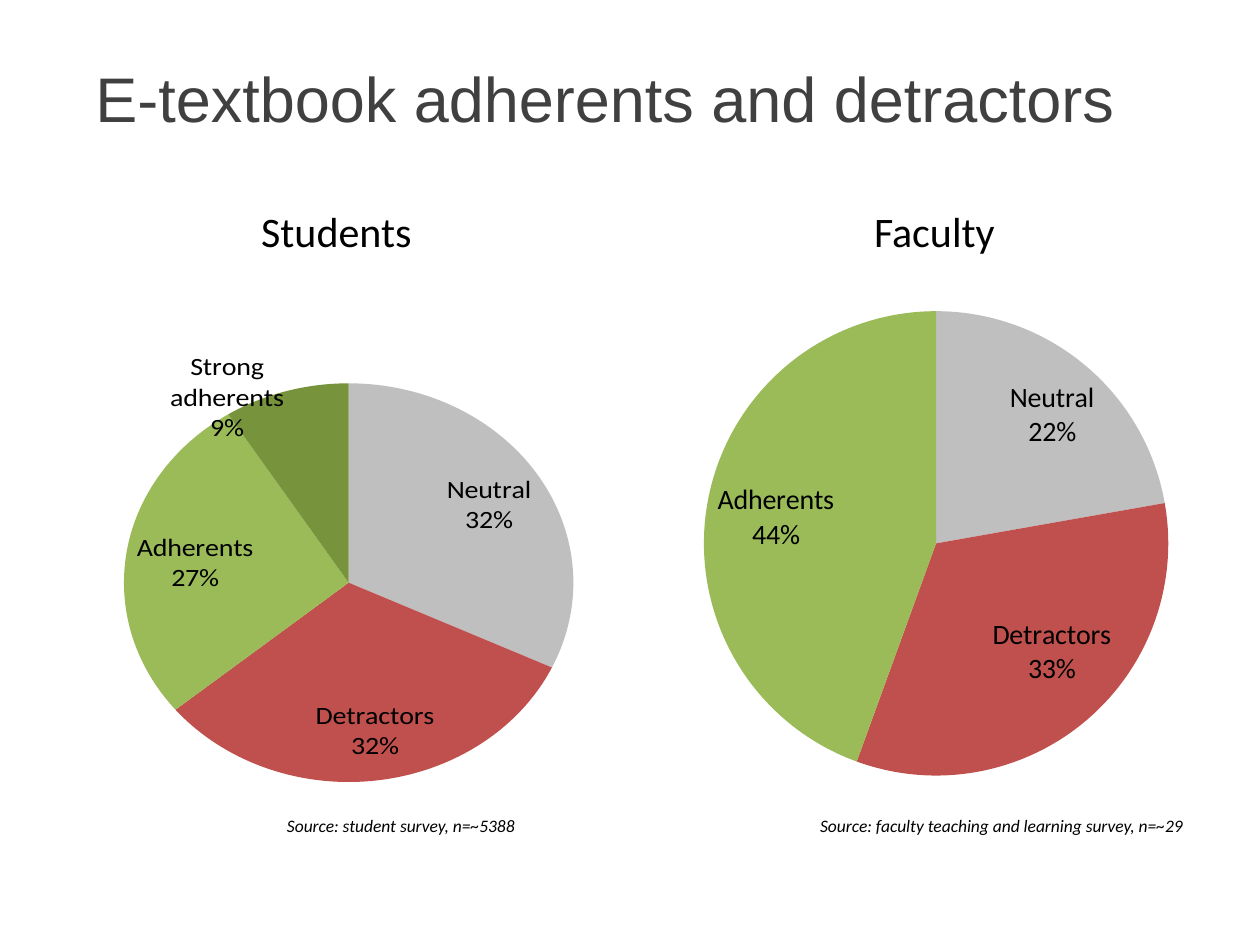
from lxml import etree
from pptx import Presentation
from pptx.chart.data import CategoryChartData
from pptx.dml.color import RGBColor
from pptx.enum.chart import XL_CHART_TYPE, XL_LABEL_POSITION
from pptx.enum.text import MSO_ANCHOR, PP_ALIGN
from pptx.oxml import parse_xml
from pptx.oxml.ns import nsdecls, qn
from pptx.util import Emu, Pt

EMU_PER_PX = 914400 / 126

# Format values
TITLE = {"name": "Arial", "size": Pt(36)}
HEADING = {"name": "Calibri", "size": Pt(24)}
SOURCE = {"name": "Calibri", "size": Pt(10), "italic": True}
CHART = {"name": "Calibri", "size": Pt(12)}
LABEL = {"name": "Calibri", "size": Pt(16)}

SLICE_COLORS = {
    "Neutral": "BFBFBF",
    "Detractors": "C0504D",
    "Adherents": "9BBB59",
    "Strong adherents": "77933C",
}
PLOT_AREA = {"x": 0.18, "y": 0, "w": 0.68, "h": 1}


def px(value):
    return Emu(round(value * EMU_PER_PX))


def color(value):
    return RGBColor.from_string(value)


def set_font(font, values, font_color="000000"):
    for name, value in values.items():
        setattr(font, name, value)
    font.color.rgb = color(font_color)


def add_text(slide, box, text, values, align, font_color="000000",
             anchor=MSO_ANCHOR.TOP):
    shape = slide.shapes.add_textbox(*map(px, box))
    frame = shape.text_frame
    frame.word_wrap = True
    frame.vertical_anchor = anchor
    paragraph = frame.paragraphs[0]
    paragraph.alignment = align
    run = paragraph.add_run()
    run.text = text
    set_font(run.font, values, font_color)


def set_plot_area(chart):
    modes = '<c:xMode val="edge"/><c:yMode val="edge"/>'
    sizes = "".join(f'<c:{key} val="{value}"/>' for key, value in PLOT_AREA.items())
    layout = parse_xml(
        f'<c:layout {nsdecls("c")}><c:manualLayout><c:layoutTarget val="inner"/>'
        f"{modes}{sizes}</c:manualLayout></c:layout>")
    plot_area = chart.plots[0]._element.getparent()
    for old_layout in plot_area.findall(qn("c:layout")):
        plot_area.remove(old_layout)
    plot_area.insert(0, layout)


def add_pie(slide, box, shares):
    data = CategoryChartData()
    data.categories = list(shares)
    data.add_series("Series 1", list(shares.values()))
    chart = slide.shapes.add_chart(XL_CHART_TYPE.PIE, *map(px, box), data).chart
    chart.has_title = False
    chart.has_legend = False
    set_font(chart.font, CHART)
    set_plot_area(chart)

    # Slices
    series = chart.plots[0].series[0]
    for index, category in enumerate(shares):
        slice_format = series.points[index].format
        slice_format.fill.solid()
        slice_format.fill.fore_color.rgb = color(SLICE_COLORS[category])
        slice_format.line.fill.background()

    # Category and percentage on separate lines
    labels = series.data_labels
    label_values = {
        "show_value": False,
        "show_category_name": True,
        "show_percentage": True,
        "number_format": "0%",
        "number_format_is_linked": False,
        "position": XL_LABEL_POSITION.BEST_FIT,
    }
    for name, value in label_values.items():
        setattr(labels, name, value)
    set_font(labels.font, LABEL)
    separator = etree.Element(qn("c:separator"))
    separator.text = "\n"
    labels._element.find(qn("c:showBubbleSize")).addnext(separator)


def main():
    presentation = Presentation()
    presentation.slide_width = px(1260)
    presentation.slide_height = px(945)
    slide = presentation.slides.add_slide(presentation.slide_layouts[6])

    # Title
    add_text(slide, (83, 47, 1105, 101), "E-textbook adherents and detractors",
             TITLE, PP_ALIGN.LEFT, "404040", MSO_ANCHOR.MIDDLE)

    # Pies
    add_pie(slide, (5, 294, 661, 519),
            {"Neutral": 32, "Detractors": 32, "Adherents": 27, "Strong adherents": 9})
    add_pie(slide, (581, 305, 683, 477),
            {"Neutral": 22, "Detractors": 33, "Adherents": 44})

    # Headings
    for left, text in ((179, "Students"), (777, "Faculty")):
        add_text(slide, (left, 199, 315, 63), text, HEADING, PP_ALIGN.CENTER)

    # Sources
    sources = (
        (242, 285, "Source: student survey, n=~5388"),
        (788, 407, "Source: faculty teaching and learning survey, n=~29"),
    )
    for left, width, text in sources:
        add_text(slide, (left, 809, width, 34), text, SOURCE, PP_ALIGN.RIGHT)

    presentation.save("out.pptx")


if __name__ == "__main__":
    main()
